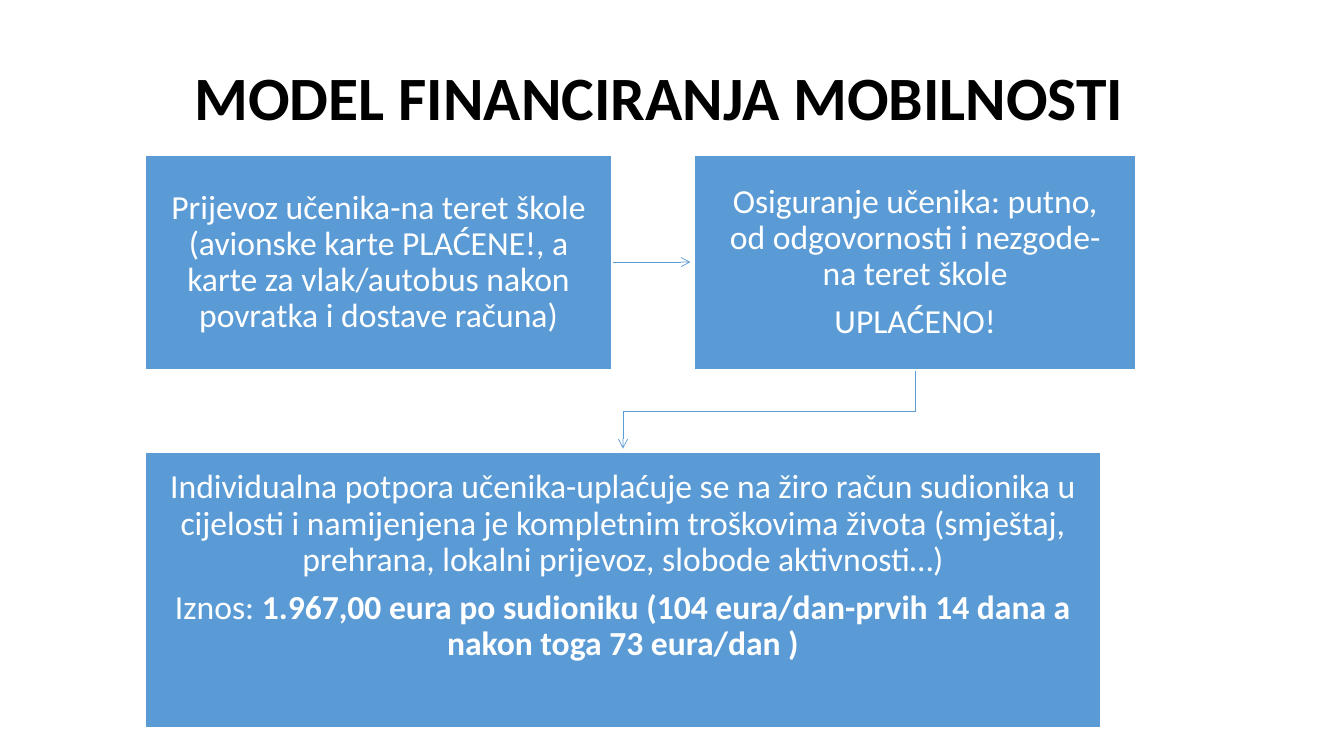
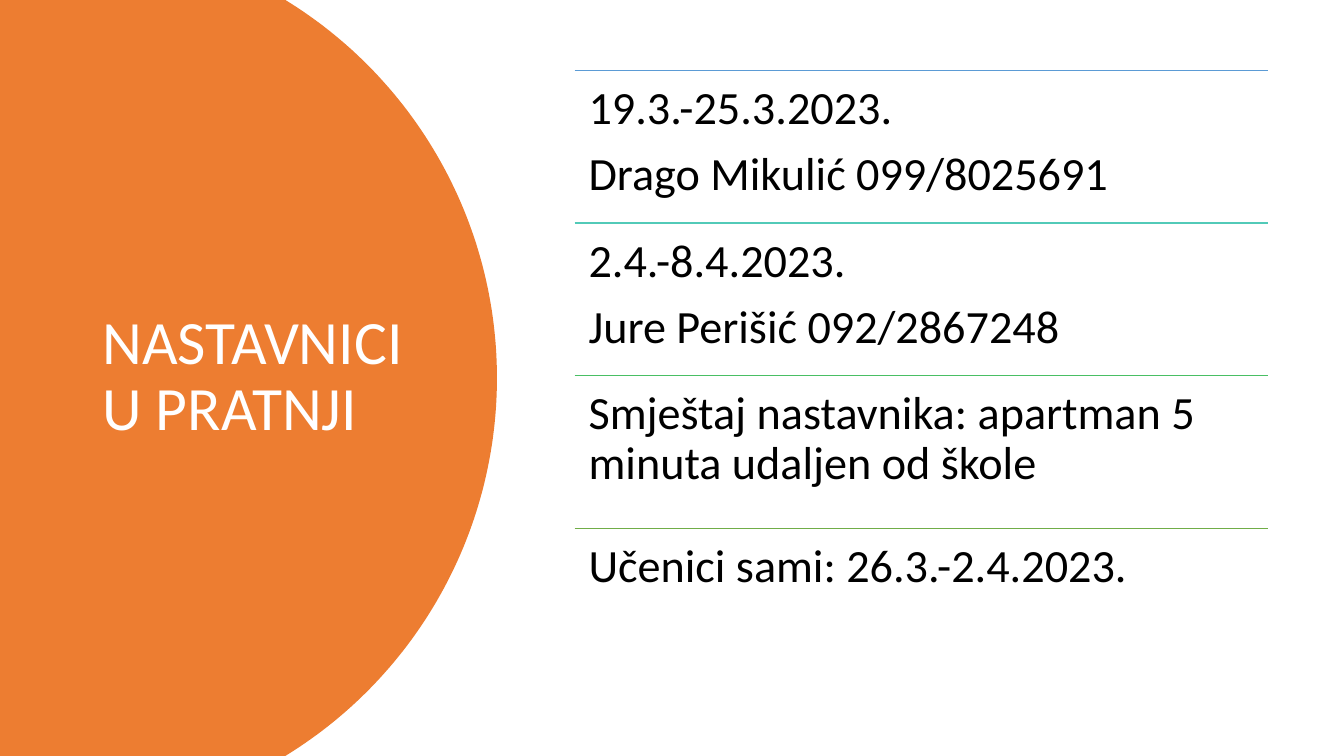
import math

from lxml import etree
from pptx import Presentation
from pptx.dml.color import RGBColor
from pptx.enum import shapes, text
from pptx.oxml import ns
from pptx.util import Pt

FONT = "Calibri"
BLACK = RGBColor(0x00, 0x00, 0x00)
WHITE = RGBColor(0xFF, 0xFF, 0xFF)
BLUE = RGBColor(0x5B, 0x9B, 0xD5)
TEAL = RGBColor(0x52, 0xCA, 0xB8)
MINT = RGBColor(0x49, 0xBF, 0x64)
GREEN = RGBColor(0x70, 0xAD, 0x47)
ORANGE = RGBColor(0xED, 0x7D, 0x31)
MIDDLE, TOP = text.MSO_ANCHOR.MIDDLE, text.MSO_ANCHOR.TOP
LEFT, CENTER = text.PP_ALIGN.LEFT, text.PP_ALIGN.CENTER
WIDE, HIGH = 960, 540


def write(shape, paras, size, color, anchor, align, inset, gap=0.35):
    """Fill a shape with paragraphs; each is a list of (words, bold) runs."""
    frame = shape.text_frame
    frame.word_wrap = True
    frame.vertical_anchor = anchor
    frame.margin_left = frame.margin_right = Pt(inset[0])
    frame.margin_top = frame.margin_bottom = Pt(inset[1])
    for i, runs in enumerate(paras):
        para = frame.add_paragraph() if i else frame.paragraphs[0]
        para.alignment = align
        para.line_spacing = 0.9
        para.space_after = Pt(size * gap)
        for words, bold in runs:
            run = para.add_run()
            run.text = words
            font = run.font
            font.name, font.size, font.bold = FONT, Pt(size), bold
            font.color.rgb = color


def title(slide, words, area, color, bold):
    """Add a slide title."""
    box = slide.shapes.add_textbox(*map(Pt, area))
    write(box, [[(words, bold)]], 44, color, MIDDLE, LEFT, (7.2, 3.6), 0)


def panel(slide, area, paras, anchor=MIDDLE):
    """Add a blue box with centred white text."""
    box = slide.shapes.add_shape(shapes.MSO_SHAPE.RECTANGLE, *map(Pt, area))
    box.shadow.inherit = False
    box.fill.solid()
    box.fill.fore_color.rgb = BLUE
    box.line.color.rgb = WHITE
    box.line.width = Pt(1.5)
    write(box, paras, 24, WHITE, anchor, CENTER, (12.2, 13))


def rule(slide, start, end, color, width):
    """Add a straight line without a shadow."""
    line = slide.shapes.add_connector(
        shapes.MSO_CONNECTOR.STRAIGHT, *map(Pt, start + end))
    line.line.color.rgb = color
    line.line.width = Pt(width)
    etree.SubElement(line._element.spPr, ns.qn("a:effectLst"))
    return line


def outline(slide, points, close):
    """Add a freeform through the points."""
    spots = [(Pt(x), Pt(y)) for x, y in points]
    pen = slide.shapes.build_freeform(*spots[0])
    pen.add_line_segments(spots[1:], close=close)
    form = pen.convert_to_shape()
    form.shadow.inherit = False
    return form


def arrow(shape):
    """Put an open arrowhead at the end of a line."""
    tail = etree.SubElement(shape.line._get_or_add_ln(), ns.qn("a:tailEnd"))
    tail.set("type", "arrow")


def elbow(slide, points):
    """Add a bent blue arrow."""
    bend = outline(slide, points, False)
    bend.fill.background()
    bend.line.color.rgb = BLUE
    bend.line.width = Pt(0.5)
    arrow(bend)


def disc(slide):
    """Add the orange circle segment at the left edge."""
    mid, radius, steps = 38.3, 316.7, 120
    half = math.asin(HIGH / 2 / radius)
    turns = [half * (2 * i / steps - 1) for i in range(steps + 1)]
    arc = [(mid + radius * math.cos(t), HIGH / 2 + radius * math.sin(t))
           for t in turns]
    form = outline(slide, [(0, 0), *arc, (0, HIGH)], True)
    form.fill.solid()
    form.fill.fore_color.rgb = ORANGE
    form.line.fill.background()


def funding(slide):
    """Build the slide on how mobility is funded."""
    title(slide, "MODEL FINANCIRANJA MOBILNOSTI",
          (131.8, 19.4, 828, 104.4), BLACK, True)
    left, top, high = 103.7, 110.9, 153.4
    arrow(rule(slide, (437, 187.2), (493.2, 187.2), BLUE, 0.5))
    panel(slide, (left, top, 333.4, high), [[(
        "Prijevoz učenika-na teret škole (avionske karte PLAĆENE!, a karte "
        "za vlak/autobus nakon povratka i dostave računa)", False)]])
    elbow(slide, [(653.8, 264.3), (653.8, 293.8), (445, 293.8), (445, 320.4)])
    panel(slide, (496, top, 315.4, high), [
        [("Osiguranje učenika: putno, od odgovornosti i nezgode- "
          "na teret škole", False)],
        [("UPLAĆENO!", False)]])
    panel(slide, (left, 322.6, 682.6, 197.3), [
        [("Individualna potpora učenika-uplaćuje se na žiro račun sudionika "
          "u cijelosti i namijenjena je kompletnim troškovima života "
          "(smještaj, prehrana, lokalni prijevoz, slobode aktivnosti…)",
          False)],
        [("Iznos: ", False),
         ("1.967,00 eura po sudioniku (104 eura/dan-prvih 14 dana a nakon "
          "toga 73 eura/dan )", True)]], TOP)


def escorts(slide):
    """Build the slide on accompanying teachers."""
    disc(slide)
    title(slide, "NASTAVNICI U PRATNJI",
          (66.2, 50.4, 232.6, 438.5), WHITE, False)
    rows = [
        (BLUE, ["19.3.-25.3.2023.", "Drago Mikulić 099/8025691"]),
        (TEAL, ["2.4.-8.4.2023.", "Jure Perišić 092/2867248"]),
        (MINT, ["Smještaj nastavnika: apartman 5 minuta udaljen od škole"]),
        (GREEN, ["Učenici sami: 26.3.-2.4.2023."]),
    ]
    left, top, wide, step = 410.4, 50.4, 495.4, 109
    for i, (color, lines) in enumerate(rows):
        y = top + i * step
        rule(slide, (left, y), (left + wide, y), color, 1)
        box = slide.shapes.add_textbox(*map(Pt, (left, y, wide, step)))
        write(box, [[(words, False)] for words in lines],
              33, BLACK, TOP, LEFT, (10, 10))


def main():
    """Build and save the deck."""
    deck = Presentation()
    deck.slide_width, deck.slide_height = Pt(WIDE), Pt(HIGH)
    for build in (funding, escorts):
        build(deck.slides.add_slide(deck.slide_layouts[6]))
    deck.save("out.pptx")


if __name__ == "__main__":
    main()
